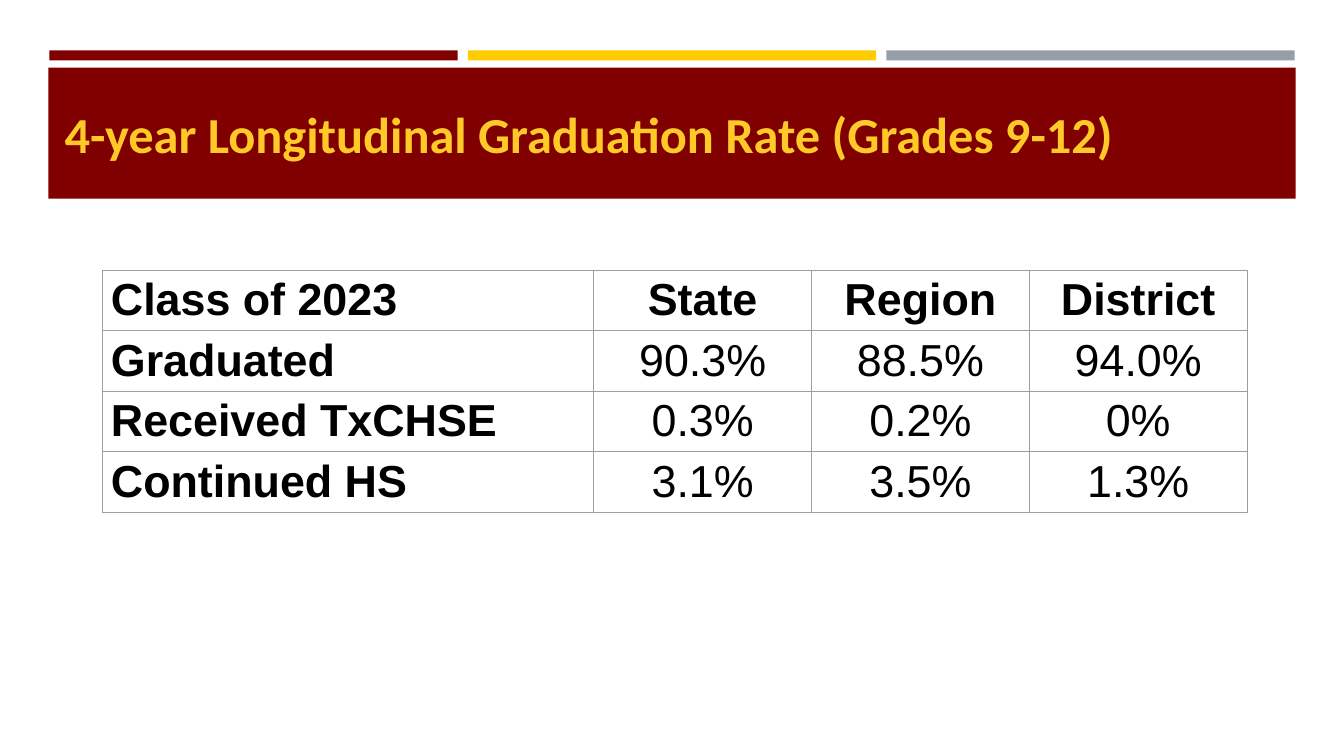
import pptx
import pptx.util
import pptx.oxml
import pptx.oxml.ns
import pptx.dml.color
import pptx.enum.shapes
import pptx.enum.text

Inches = pptx.util.Inches
Pt = pptx.util.Pt
RGBColor = pptx.dml.color.RGBColor
PP_ALIGN = pptx.enum.text.PP_ALIGN
MSO_ANCHOR = pptx.enum.text.MSO_ANCHOR

MAROON = RGBColor(0x80, 0x00, 0x00)
GOLD = RGBColor(0xFF, 0xCC, 0x00)
GRAY = RGBColor(0x96, 0x9F, 0xA7)
TITLE_YELLOW = RGBColor(0xFF, 0xCA, 0x28)
BORDER_GRAY = RGBColor(0x9E, 0x9E, 0x9E)
BLACK = RGBColor(0x00, 0x00, 0x00)

GRADUATION_RATES = [
    ["Class of 2023", "State", "Region", "District"],
    ["Graduated", "90.3%", "88.5%", "94.0%"],
    ["Received TxCHSE", "0.3%", "0.2%", "0%"],
    ["Continued HS", "3.1%", "3.5%", "1.3%"],
]
COLUMN_WIDTHS = [4.87, 2.16, 2.16, 2.16]
ROW_HEIGHT = 0.6


def add_band(slide, left, top, width, height, color):
    band = slide.shapes.add_shape(
        pptx.enum.shapes.MSO_SHAPE.RECTANGLE,
        Inches(left), Inches(top), Inches(width), Inches(height))
    band.fill.solid()
    band.fill.fore_color.rgb = color
    band.line.fill.background()
    band.shadow.inherit = False


def outline_cell(cell, color, width):
    """Draw all four borders; they must come before the fill in the cell XML."""
    properties = cell._tc.get_or_add_tcPr()
    for index, side in enumerate(["lnL", "lnR", "lnT", "lnB"]):
        border = pptx.oxml.parse_xml(
            f'<a:{side} {pptx.oxml.ns.nsdecls("a")} w="{width}"><a:solidFill>'
            f'<a:srgbClr val="{color}"/></a:solidFill></a:{side}>')
        properties.insert(index, border)


presentation = pptx.Presentation()
presentation.slide_width = Inches(13.33)
presentation.slide_height = Inches(7.5)
slide = presentation.slides.add_slide(presentation.slide_layouts[5])

# Accent strips and title banner
for index, color in enumerate([MAROON, GOLD, GRAY]):
    add_band(slide, 0.49 + index * 4.15, 0.5, 4.05, 0.1, color)
add_band(slide, 0.48, 0.67, 12.37, 1.3, MAROON)

# Title, brought in front of the banner
title = slide.shapes.title
title.element.getparent().append(title.element)
title.left, title.top = Inches(0.64), Inches(0.77)
title.width, title.height = Inches(12.06), Inches(1.11)
heading = title.text_frame
heading.text = "4-year Longitudinal Graduation Rate (Grades 9-12)"
heading.margin_left = heading.margin_right = 0
heading.margin_top = heading.margin_bottom = 0
heading.vertical_anchor = MSO_ANCHOR.MIDDLE
heading.paragraphs[0].alignment = PP_ALIGN.LEFT
heading_font = heading.paragraphs[0].font
heading_font.name = "Calibri"
heading_font.size = Pt(36)
heading_font.bold = True
heading_font.color.rgb = TITLE_YELLOW

# Graduation rates
rates = slide.shapes.add_table(
    len(GRADUATION_RATES), len(COLUMN_WIDTHS), Inches(1.02), Inches(2.68),
    Inches(sum(COLUMN_WIDTHS)), Inches(ROW_HEIGHT * len(GRADUATION_RATES))).table
rates.first_row = False
rates.horz_banding = False
for column, width in zip(rates.columns, COLUMN_WIDTHS):
    column.width = Inches(width)

for row, values in enumerate(GRADUATION_RATES):
    rates.rows[row].height = Inches(ROW_HEIGHT)
    for column, value in enumerate(values):
        cell = rates.cell(row, column)
        cell.text = value
        cell.fill.background()
        cell.vertical_anchor = MSO_ANCHOR.MIDDLE
        cell.margin_left = cell.margin_right = Inches(0.08)
        cell.margin_top = cell.margin_bottom = Inches(0.04)
        outline_cell(cell, BORDER_GRAY, Pt(0.75))
        paragraph = cell.text_frame.paragraphs[0]
        paragraph.alignment = PP_ALIGN.LEFT if column == 0 else PP_ALIGN.CENTER
        paragraph.font.name = "Arial"
        paragraph.font.size = Pt(32)
        paragraph.font.bold = row == 0 or column == 0
        paragraph.font.color.rgb = BLACK

presentation.save("out.pptx")
